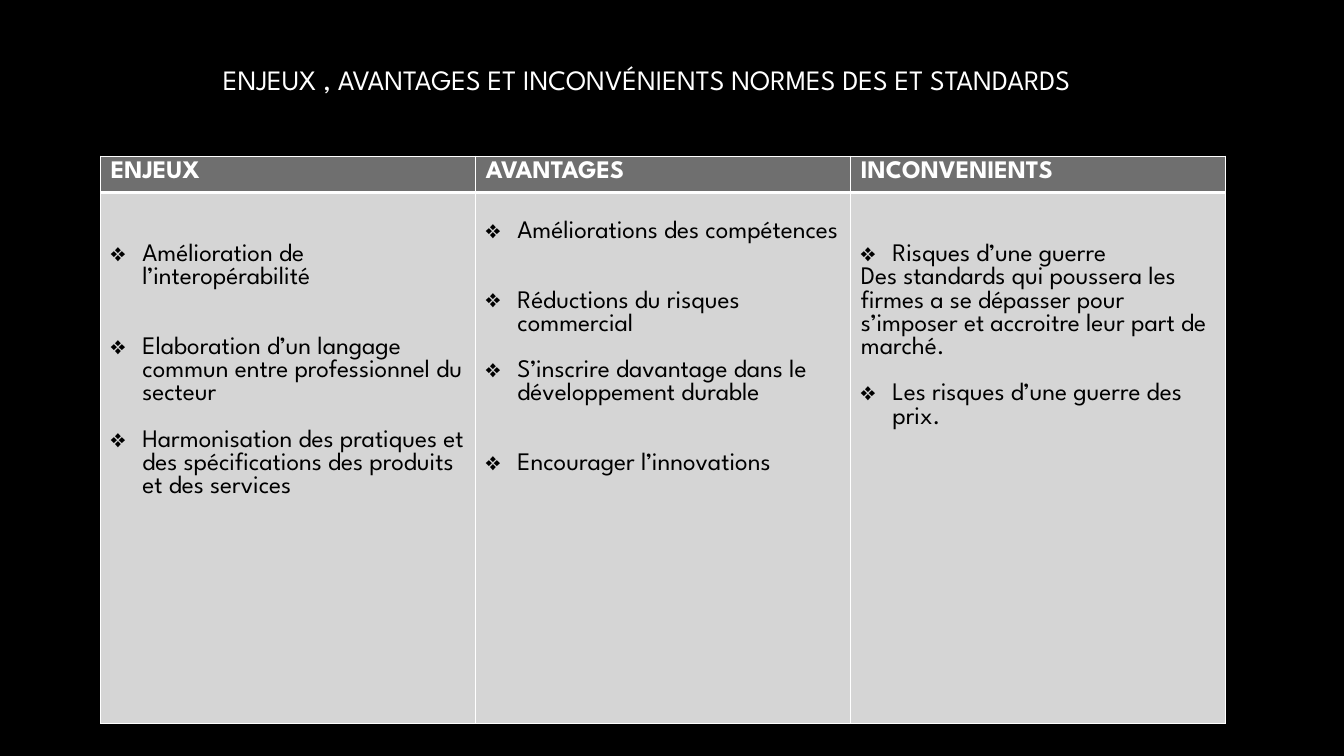
from dataclasses import dataclass

from lxml.etree import SubElement
from pptx import Presentation
from pptx.dml.color import RGBColor
from pptx.enum.text import MSO_ANCHOR, MSO_AUTO_SIZE, PP_ALIGN
from pptx.oxml import parse_xml
from pptx.oxml.ns import nsdecls, qn
from pptx.util import Pt


@dataclass(frozen=True)
class Theme:
    font: str = "League Spartan"
    title_size: int = 20
    table_size: int = 18
    background: str = "000000"
    light: str = "FFFFFF"
    dark: str = "000000"
    header_fill: str = "6F6F6F"
    body_fill: str = "D5D5D5"


THEME = Theme()
LINE = 16.56  # height of one table text line
INDENT = 22.5
CELL_MARGIN = 3.6

TITLE = "ENJEUX , AVANTAGES ET INCONVÉNIENTS NORMES DES ET STANDARDS"

# Heading, blank lines above the list, then (lines before, bulleted, text)
COLUMNS = [
    ("ENJEUX", 2, [
        (0, True, "Amélioration de l’interopérabilité"),
        (2, True, "Elaboration d’un langage commun entre professionnel du secteur"),
        (1, True, "Harmonisation des pratiques et des spécifications des produits "
                  "et des services"),
    ]),
    ("AVANTAGES", 1, [
        (0, True, "Améliorations des compétences"),
        (2, True, "Réductions du risques commercial"),
        (1, True, "S’inscrire davantage dans le développement durable"),
        (2, True, "Encourager l’innovations"),
    ]),
    ("INCONVENIENTS", 2, [
        (0, True, "Risques d’une guerre"),
        (0, False, "Des standards qui poussera les firmes a se dépasser pour "
                   "s’imposer et accroitre leur part de marché."),
        (1, True, "Les risques d’une guerre des prix."),
    ]),
]


def style_font(para, size, color, bold=False):
    para.font.name = THEME.font
    para.font.size = Pt(size)
    para.font.bold = bold
    para.font.color.rgb = RGBColor.from_string(color)


def add_bullet(para):
    props = para._p.get_or_add_pPr()
    props.set("marL", str(Pt(INDENT)))
    props.set("indent", str(-Pt(INDENT)))
    SubElement(props, qn("a:buChar")).set("char", "❖")


def style_cell(cell, fill, top, bottom):
    """Fill the cell and draw white borders; top and bottom are line widths."""
    cell.fill.solid()
    cell.fill.fore_color.rgb = RGBColor.from_string(fill)
    props = cell._tc.get_or_add_tcPr()
    sides = {"lnL": 1, "lnR": 1, "lnT": top, "lnB": bottom}
    for index, (side, width) in enumerate(sides.items()):
        props.insert(index, parse_xml(
            f'<a:{side} {nsdecls("a")} w="{Pt(width)}"><a:solidFill>'
            f'<a:srgbClr val="{THEME.light}"/></a:solidFill></a:{side}>'))


def fill_header(cell, heading):
    style_cell(cell, THEME.header_fill, top=1, bottom=3)
    para = cell.text_frame.paragraphs[0]
    para.text = heading
    style_font(para, THEME.table_size, THEME.light, bold=True)


def fill_body(cell, lead, items):
    style_cell(cell, THEME.body_fill, top=3, bottom=1)
    cell.margin_top = Pt(CELL_MARGIN + lead * LINE)
    frame = cell.text_frame
    for index, (gap, bulleted, text) in enumerate(items):
        para = frame.add_paragraph() if index else frame.paragraphs[0]
        para.text = text
        if bulleted:
            add_bullet(para)
        para.space_before = Pt(gap * LINE)
        style_font(para, THEME.table_size, THEME.dark)


def set_title(page):
    title = page.shapes.title
    title.left, title.top, title.width, title.height = Pt(72), Pt(0), Pt(780), Pt(150)
    frame = title.text_frame
    frame.auto_size = MSO_AUTO_SIZE.NONE
    frame.word_wrap = True
    frame.vertical_anchor = MSO_ANCHOR.MIDDLE
    frame.margin_bottom = Pt(39.6)
    para = frame.paragraphs[0]
    para.text = TITLE
    para.alignment = PP_ALIGN.CENTER
    style_font(para, THEME.title_size, THEME.light)


def add_comparison_table(page):
    header_height, body_height, column_width = 26, 379.5, 267.9
    table = page.shapes.add_table(
        2, len(COLUMNS), Pt(72), Pt(111.6),
        Pt(column_width * len(COLUMNS)), Pt(header_height + body_height)).table
    table.horz_banding = False
    table.rows[0].height = Pt(header_height)
    table.rows[1].height = Pt(body_height)
    for index, (heading, lead, items) in enumerate(COLUMNS):
        table.columns[index].width = Pt(column_width)
        fill_header(table.cell(0, index), heading)
        fill_body(table.cell(1, index), lead, items)


def main():
    deck = Presentation()
    deck.slide_width, deck.slide_height = Pt(960), Pt(540)
    page = deck.slides.add_slide(deck.slide_layouts[5])
    page.background.fill.solid()
    page.background.fill.fore_color.rgb = RGBColor.from_string(THEME.background)
    set_title(page)
    add_comparison_table(page)
    deck.save("out.pptx")


if __name__ == "__main__":
    main()
